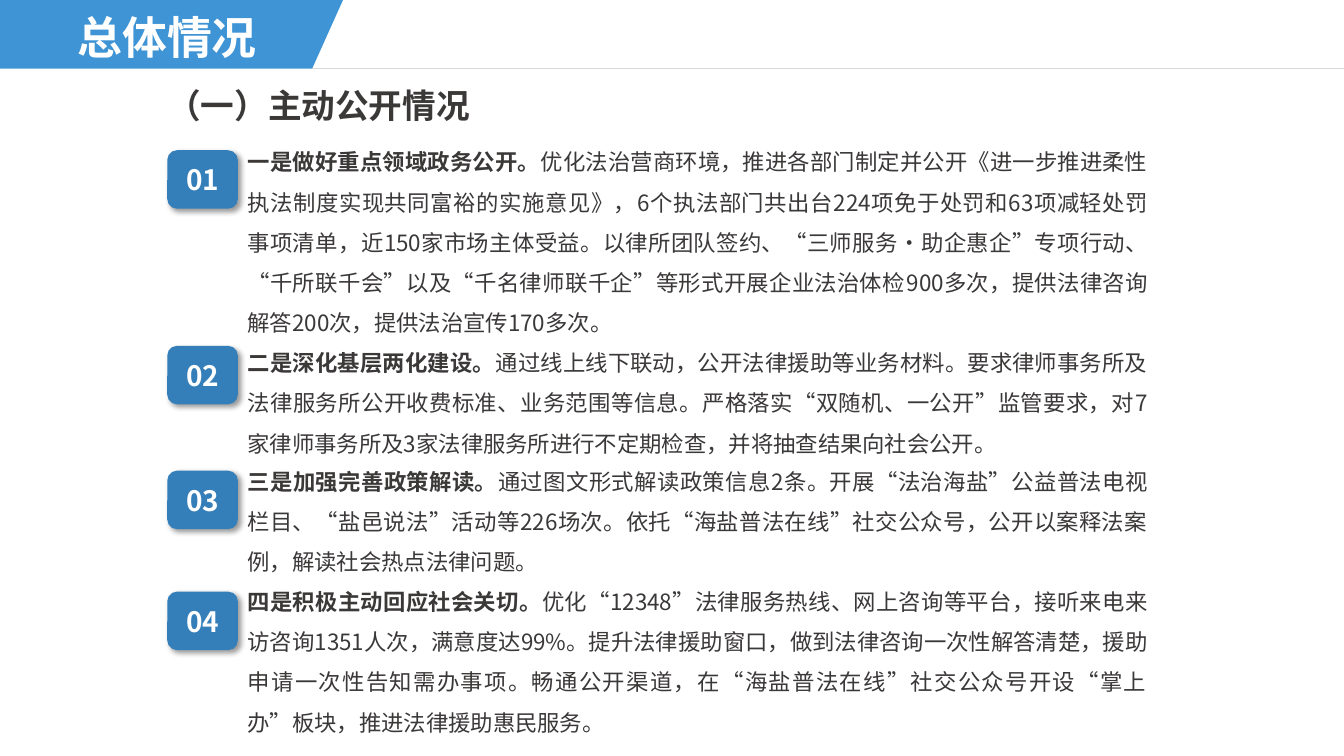
from lxml.etree import SubElement
from pptx import Presentation
from pptx.dml.color import RGBColor
from pptx.enum.shapes import MSO_CONNECTOR, MSO_SHAPE
from pptx.enum.text import MSO_ANCHOR, PP_ALIGN
from pptx.oxml import parse_xml
from pptx.oxml.ns import nsdecls, qn
from pptx.util import Pt

TITLE = "总体情况"
HEADING = "（一）主动公开情况"
ITEMS = [
    (92.9, 107.3, 152.6, "一是做好重点领域政务公开。",
     "优化法治营商环境，推进各部门制定并公开《进一步推进柔性执法制度实现共同富裕的实施意见》，"
     "6个执法部门共出台224项免于处罚和63项减轻处罚事项清单，近150家市场主体受益。"
     "以律所团队签约、“三师服务·助企惠企”专项行动、“千所联千会”以及“千名律师联千企”等形式"
     "开展企业法治体检900多次，提供法律咨询解答200次，提供法治宣传170多次。"),
    (236.2, 247, 94.3, "二是深化基层两化建设。",
     "通过线上线下联动，公开法律援助等业务材料。要求律师事务所及法律服务所公开收费标准、"
     "业务范围等信息。严格落实“双随机、一公开”监管要求，对7家律师事务所及3家法律服务所"
     "进行不定期检查，并将抽查结果向社会公开。"),
    (321.1, 336.2, 94.3, "三是加强完善政策解读。",
     "通过图文形式解读政策信息2条。开展“法治海盐”公益普法电视栏目、“盐邑说法”活动等226场次。"
     "依托“海盐普法在线”社交公众号，公开以案释法案例，解读社会热点法律问题。"),
    (406.8, 422.6, 123.8, "四是积极主动回应社会关切。",
     "优化“12348”法律服务热线、网上咨询等平台，接听来电来访咨询1351人次，满意度达99%。"
     "提升法律援助窗口，做到法律咨询一次性解答清楚，援助申请一次性告知需办事项。"
     "畅通公开渠道，在“海盐普法在线”社交公众号开设“掌上办”板块，推进法律援助惠民服务。"),
]

THEME = {
    "face": "Noto Sans CJK SC",
    "band": "3F94D5", "badge": "347FB9", "rule": "D9D9D9",
    "ink": "3B3838", "light": "FFFFFF",
    "title": 32, "head": 24, "num": 20, "body": 16,
}
WIDE, HIGH = 960, 540
BAND, EDGE, FOOT = 49, 244.8, 223.2
LEFT, BODY = 119.5, 169.8

SHADOW = (
    f'<a:effectLst {nsdecls("a")}>'
    '<a:outerShdw blurRad="50800" dist="38100" dir="2700000" algn="tl" rotWithShape="0">'
    '<a:srgbClr val="000000"><a:alpha val="40000"/></a:srgbClr>'
    '</a:outerShdw></a:effectLst>'
)


def color(name):
    return RGBColor.from_string(THEME[name])


def paint(shape, name):
    shape.shadow.inherit = False
    shape.fill.solid()
    shape.fill.fore_color.rgb = color(name)
    shape.line.fill.background()


def write(shape, runs, size, tint, align, space=1, **frame):
    text = shape.text_frame
    for key, value in {"word_wrap": True, **frame}.items():
        setattr(text, key, value)
    para = text.paragraphs[0]
    para.alignment, para.line_spacing = align, space
    for words, bold in runs:
        run = para.add_run()
        run.text = words
        style = {"name": THEME["face"], "size": Pt(THEME[size]), "bold": bold}
        for key, value in style.items():
            setattr(run.font, key, value)
        run.font.color.rgb = color(tint)
        SubElement(run.font._element, qn("a:ea"), typeface=THEME["face"])


def label(shapes, left, top, width, height, *args, **frame):
    box = shapes.add_textbox(Pt(left), Pt(top), Pt(width), Pt(height))
    write(box, *args, **frame)


def banner(shapes):
    form = shapes.build_freeform(0, 0, scale=Pt(1))
    form.add_line_segments([(EDGE, 0), (FOOT, BAND), (0, BAND)], close=True)
    paint(form.convert_to_shape(), "band")
    rule = shapes.add_connector(
        MSO_CONNECTOR.STRAIGHT, Pt(FOOT), Pt(BAND), Pt(WIDE), Pt(BAND))
    rule.line.color.rgb = color("rule")
    rule.line.width = Pt(0.5)
    SubElement(rule._element.spPr, qn("a:effectLst"))


def badge(shapes, top, num):
    shape = shapes.add_shape(
        MSO_SHAPE.ROUNDED_RECTANGLE, Pt(LEFT), Pt(top), Pt(50.4), Pt(41.8))
    paint(shape, "badge")
    props = shape._element.spPr
    props.replace(props.find(qn("a:effectLst")), parse_xml(SHADOW))
    write(shape, [(f"{num:02}", True)], "num", "light", PP_ALIGN.CENTER,
          vertical_anchor=MSO_ANCHOR.MIDDLE)


def main():
    deck = Presentation()
    deck.slide_width, deck.slide_height = Pt(WIDE), Pt(HIGH)
    shapes = deck.slides.add_slide(deck.slide_layouts[6]).shapes
    flat = {f"margin_{side}": 0 for side in ("left", "top", "right", "bottom")}

    banner(shapes)
    label(shapes, 23, 7.2, 193, 38.9, [(TITLE, True)],
          "title", "light", PP_ALIGN.CENTER, **flat)
    label(shapes, LEFT, 60.5, 224.6, 28.8, [(HEADING, True)],
          "head", "ink", PP_ALIGN.LEFT, **flat)
    for num, (top, mark, height, lead, rest) in enumerate(ITEMS, 1):
        label(shapes, BODY, top, 657.4, height, [(lead, True), (rest, False)],
              "body", "ink", PP_ALIGN.JUSTIFY, 1.5)
        badge(shapes, mark, num)
    deck.save("out.pptx")


if __name__ == "__main__":
    main()
